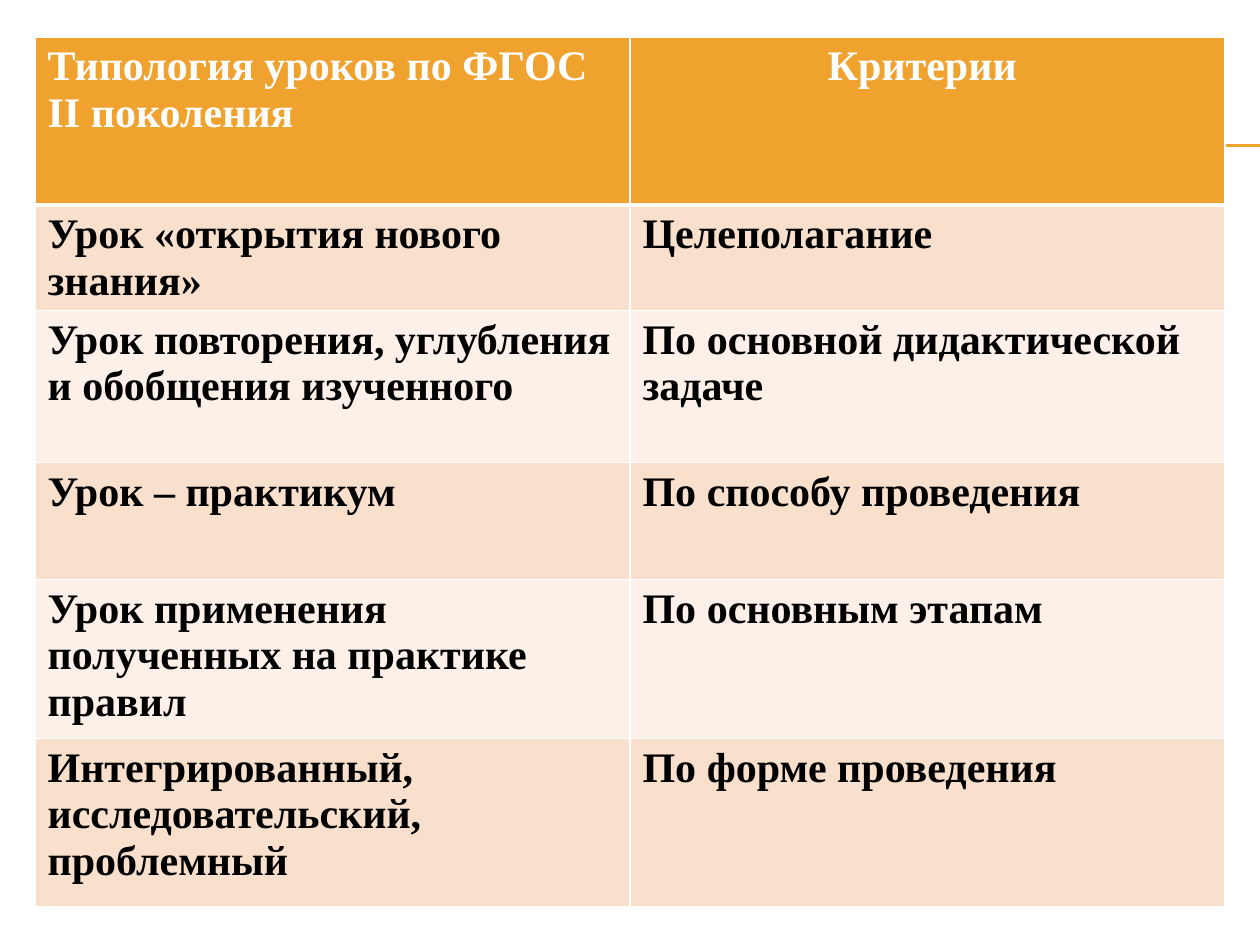
"""Build a slide with a table of lesson types and their criteria."""
from lxml import etree
from pptx import Presentation
from pptx.dml.color import RGBColor
from pptx.enum.shapes import MSO_CONNECTOR
from pptx.enum.text import PP_ALIGN
from pptx.oxml.ns import qn
from pptx.util import Inches, Pt

STRAIGHT = MSO_CONNECTOR.STRAIGHT
LEFT, CENTER = PP_ALIGN.LEFT, PP_ALIGN.CENTER

HEADERS = [("Типология уроков по ФГОС II поколения", LEFT), ("Критерии ", CENTER)]
LESSONS = [
    ("Урок «открытия нового знания»", "Целеполагание"),
    ("Урок повторения, углубления и обобщения изученного", "По основной дидактической задаче"),
    ("Урок – практикум", "По способу проведения"),
    ("Урок применения полученных на практике правил", "По основным этапам"),
    ("Интегрированный, исследовательский, проблемный", "По форме проведения"),
]
COLORS = {
    "accent": "F0A22E",
    "odd": "F9E0CD",
    "even": "FCF0E8",
    "white": "FFFFFF",
    "black": "000000",
}
FONT = {"name": "Times New Roman", "size": Pt(24), "bold": True}

SCALE = Inches(1) / 126
SLIDE_SIZE = (1260, 945)
TABLE_LEFT, TABLE_TOP = 35, 37
COLUMN_WIDTH = 595
ROW_HEIGHTS = [168, 105, 152, 117, 159, 168]
RULE_LEFT, RULE_TOPS = 71, (145, 146)


def px(length):
    return round(length * SCALE)


def rgb(name):
    return RGBColor.from_string(COLORS[name])


def add_rule(slide, top):
    rule = slide.shapes.add_connector(
        STRAIGHT, px(RULE_LEFT), px(top), px(SLIDE_SIZE[0]), px(top))
    rule.line.color.rgb = rgb("accent")
    rule.line.width = Pt(0.75)
    etree.SubElement(rule._element.spPr, qn("a:effectLst"))


def set_borders(cell, widths):
    properties = cell._tc.get_or_add_tcPr()
    for side, width in widths.items():
        border = etree.SubElement(properties, qn(f"a:ln{side}"), w=str(Pt(width)))
        fill = etree.SubElement(border, qn("a:solidFill"))
        etree.SubElement(fill, qn("a:srgbClr"), val=COLORS["white"])


def fill_cell(cell, text, alignment, fill, color, widths):
    set_borders(cell, widths)
    cell.fill.solid()
    cell.fill.fore_color.rgb = rgb(fill)
    paragraph = cell.text_frame.paragraphs[0]
    paragraph.alignment = alignment
    run = paragraph.add_run()
    run.text = text
    for attribute, value in FONT.items():
        setattr(run.font, attribute, value)
    run.font.color.rgb = rgb(color)


def add_lesson_table(slide):
    rows = [HEADERS] + [[(text, LEFT) for text in lesson] for lesson in LESSONS]
    columns = len(HEADERS)
    table = slide.shapes.add_table(
        len(rows), columns, px(TABLE_LEFT), px(TABLE_TOP),
        px(COLUMN_WIDTH * columns), px(sum(ROW_HEIGHTS))).table
    for column in table.columns:
        column.width = px(COLUMN_WIDTH)
    for index, (row, height) in enumerate(zip(rows, ROW_HEIGHTS)):
        table.rows[index].height = px(height)
        fill = "accent" if index == 0 else "odd" if index % 2 else "even"
        color = "black" if index else "white"
        widths = {"L": 1, "R": 1, "T": 3 if index == 1 else 1, "B": 1 if index else 3}
        for cell, (text, alignment) in zip(table.rows[index].cells, row):
            fill_cell(cell, text, alignment, fill, color, widths)


def main():
    presentation = Presentation()
    presentation.slide_width, presentation.slide_height = map(px, SLIDE_SIZE)
    slide = presentation.slides.add_slide(presentation.slide_layouts[6])
    for top in RULE_TOPS:
        add_rule(slide, top)
    add_lesson_table(slide)
    presentation.save("out.pptx")


if __name__ == "__main__":
    main()
